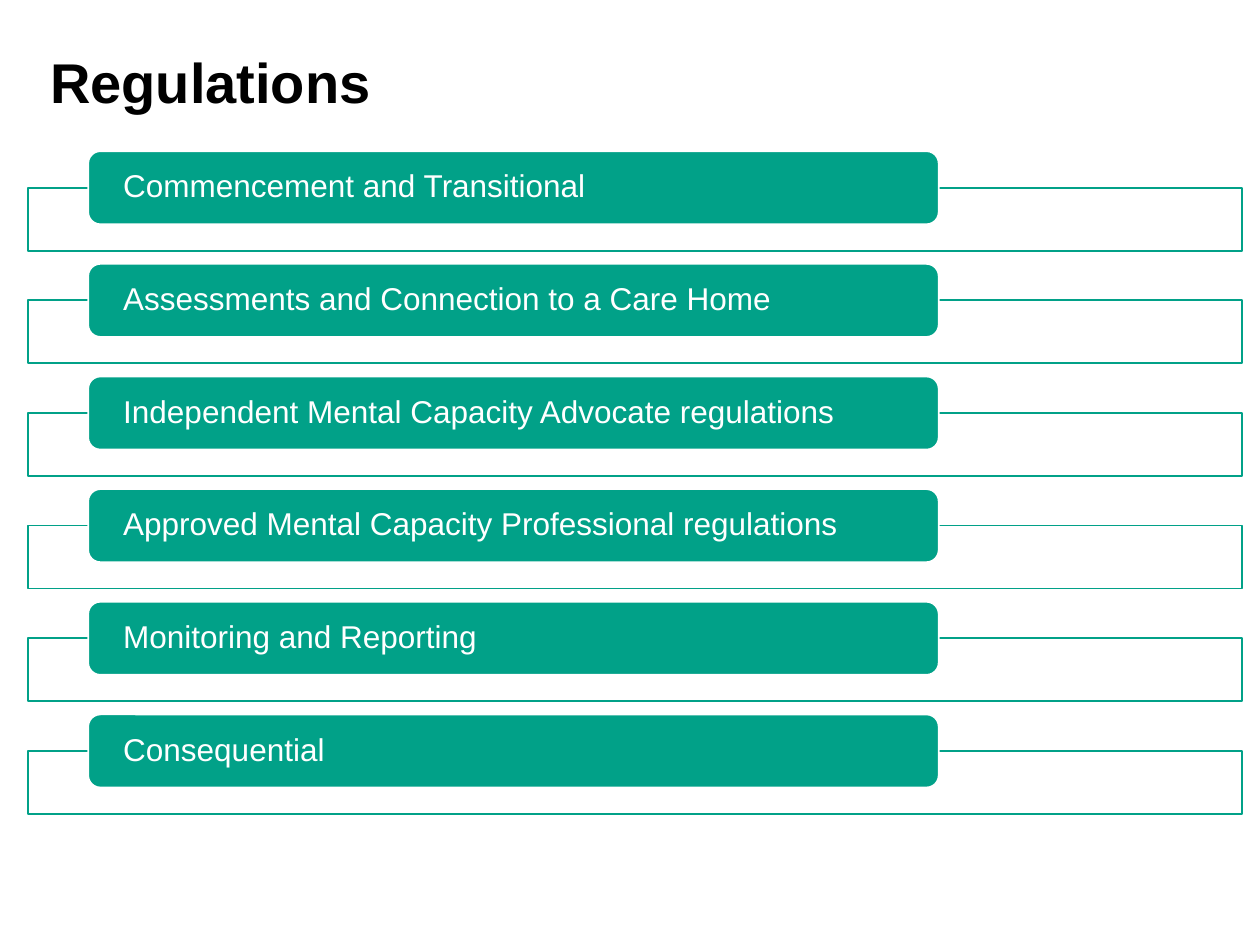
from dataclasses import dataclass

from lxml.etree import SubElement
from pptx import Presentation
from pptx.dml.color import RGBColor as RGB
from pptx.enum.shapes import MSO_SHAPE as Kind
from pptx.enum.text import MSO_ANCHOR as Anchor, PP_ALIGN as Align
from pptx.oxml.ns import qn
from pptx.shapes.autoshape import Shape
from pptx.slide import Slide
from pptx.util import Inches, Pt


@dataclass(frozen=True)
class Theme:
    font: str = "Arial"
    teal: RGB = RGB(0x01, 0xA1, 0x88)
    white: RGB = RGB(0xFF, 0xFF, 0xFF)
    black: RGB = RGB(0, 0, 0)
    head: Pt = Pt(32)
    body: Pt = Pt(18)
    line: Pt = Pt(1)


@dataclass(frozen=True)
class Box:
    left: float
    top: float
    width: float
    height: float

    def place(self) -> list[Inches]:
        return [Inches(n) for n in (self.left, self.top, self.width, self.height)]


@dataclass(frozen=True)
class Item:
    label: str
    top: float


THEME = Theme()
LABELS = (
    "Commencement and Transitional",
    "Assessments and Connection to a Care Home",
    "Independent Mental Capacity Advocate regulations",
    "Approved Mental Capacity Professional regulations",
    "Monitoring and Reporting",
    "Consequential",
)
FIRST, LAST = 1.2, 5.67
STEP = (LAST - FIRST) / (len(LABELS) - 1)
ITEMS = [Item(label, FIRST + i * STEP) for i, label in enumerate(LABELS)]


def write(shape: Shape, text: str, font: dict, frame: dict) -> None:
    body = shape.text_frame
    for name, value in frame.items():
        setattr(body, name, value)
    para = body.paragraphs[0]
    para.alignment = Align.LEFT
    para.line_spacing = 0.9
    run = para.add_run()
    run.text = text
    for name, value in font.items():
        setattr(run.font, name, value)


def draw_box(slide: Slide, kind: Kind, box: Box, fill: RGB, line: RGB) -> Shape:
    shape = slide.shapes.add_shape(kind, *box.place())
    shape.shadow.inherit = False
    shape.fill.solid()
    shape.fill.fore_color.rgb = fill
    shape.line.color.rgb = line
    shape.line.width = THEME.line
    return shape


def fade(shape: Shape, share: int) -> None:
    """Set the opacity of a solid fill in percent."""
    color = shape.fill._xPr.find(qn("a:solidFill"))[0]
    SubElement(color, qn("a:alpha"), val=str(share * 1000))


def draw_item(slide: Slide, item: Item) -> None:
    """Draw a framed panel with its label bar across the top edge."""
    panel = Box(0.22, item.top + 0.29, 9.64, 0.5)
    fade(draw_box(slide, Kind.RECTANGLE, panel, THEME.white, THEME.teal), 90)
    bar = Box(0.7, item.top, 6.75, 0.58)
    shape = draw_box(slide, Kind.ROUNDED_RECTANGLE, bar, THEME.teal, THEME.white)
    shape.text_frame.vertical_anchor = Anchor.MIDDLE
    write(
        shape,
        item.label,
        {"name": THEME.font, "size": THEME.body},
        {
            "word_wrap": True,
            "margin_left": Inches(0.25),
            "margin_right": Inches(0.25),
            "margin_top": 0,
            "margin_bottom": 0,
        },
    )
    shape.text_frame.paragraphs[0].runs[0].font.color.rgb = THEME.white


def draw_title(slide: Slide, text: str) -> None:
    shape = slide.shapes.add_textbox(*Box(0.3, 0.39, 9.39, 0.92).place())
    write(
        shape,
        text,
        {"name": THEME.font, "size": THEME.head, "bold": True},
        {"word_wrap": True, "vertical_anchor": Anchor.TOP},
    )
    shape.text_frame.paragraphs[0].runs[0].font.color.rgb = THEME.black


def main() -> None:
    deck = Presentation()
    deck.slide_width, deck.slide_height = Inches(10), Inches(7.5)
    slide = deck.slides.add_slide(deck.slide_layouts[6])
    draw_title(slide, "Regulations")
    for item in ITEMS:
        draw_item(slide, item)
    deck.save("out.pptx")


if __name__ == "__main__":
    main()
